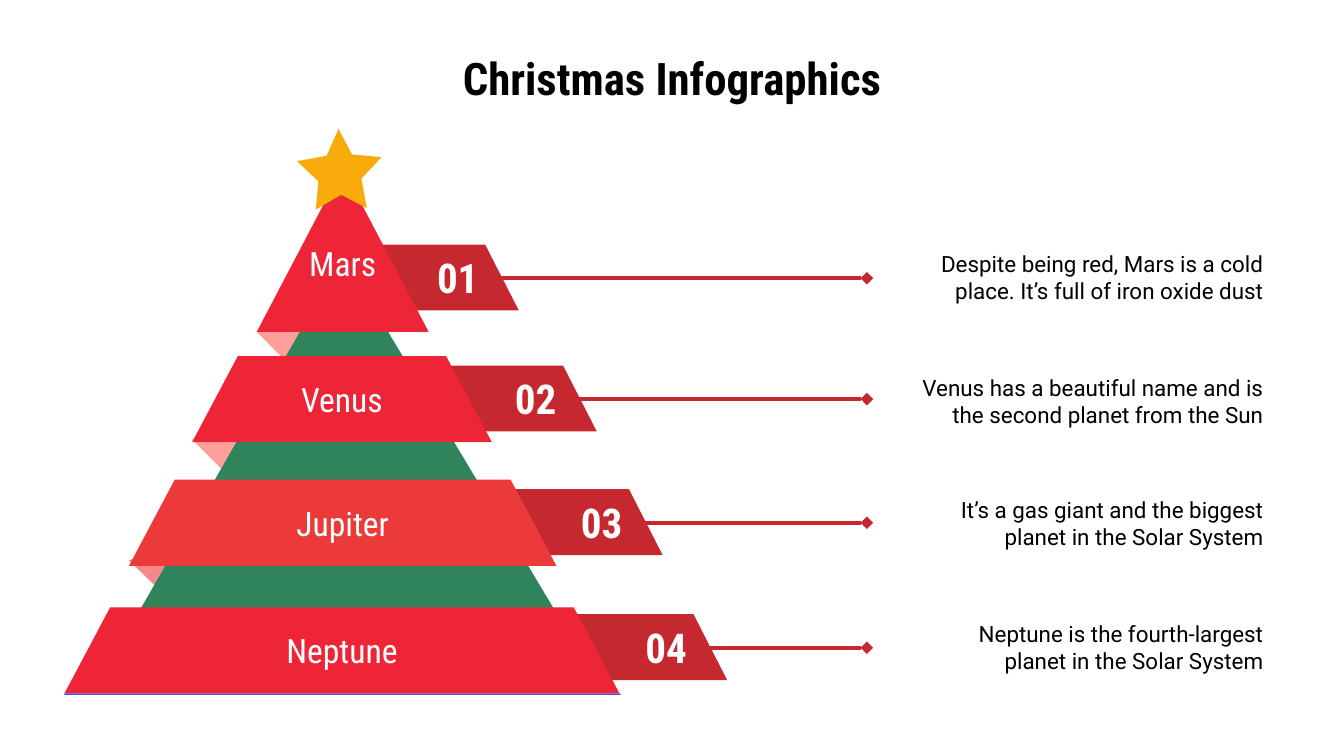
from dataclasses import dataclass

from pptx import Presentation
from pptx import util as u
from pptx.dml.color import RGBColor
from pptx.enum import shapes, text
from pptx.oxml.ns import qn
from lxml import etree

PX = u.Inches(1) // 100  # 100 px to the inch
RED, DARK_RED, GREEN, GOLD = "EE2537", "C6282F", "2F845C", "F9AB0C"
WHITE, BLACK = "FFFFFF", "000000"
CONDENSED, REGULAR = "Roboto Condensed", "Roboto"
TAG_HEIGHT = 49
NOTE_TOP, NOTE_STEP = 175, 91.67


@dataclass
class Tier:
    planet: str
    note: str
    left: int
    right: int
    top: int
    bottom: int
    slant: int
    line_y: int
    tag_left: int
    color: str = RED
    top_inset: int = 10


TIERS = [
    Tier("Mars", "Despite being red, Mars is a cold place. It’s full of iron oxide dust",
         191, 319, 125, 247, 64, 207, 217, top_inset=30),
    Tier("Venus", "Venus has a beautiful name and is the second planet from the Sun",
         143, 366, 265, 329, 34, 297, 275),
    Tier("Jupiter", "It’s a gas giant and the biggest planet in the Solar System",
         96, 414, 357, 421, 34, 389, 324, color="EC3A3B"),
    Tier("Neptune", "Neptune is the fourth-largest planet in the Solar System",
         48, 461, 452, 516, 34, 482, 372),
]
FOLDS = [
    ([(233, 233), (191, 247), (216, 272)], "FF9F99"),
    ([(185, 314), (143, 327), (169, 353)], "FF9F99"),
    ([(143, 401), (96, 417), (125, 445)], "F48989"),
]
STAR = [(284, 117), (262, 115), (252, 96), (243, 116), (221, 120),
        (237, 135), (235, 156), (254, 145), (273, 155), (269, 133)]


def px(value):
    return u.Emu(round(value) * PX)


def color(hex_code):
    return RGBColor.from_string(hex_code)


def paint(shape, fill):
    shape.shadow.inherit = False
    shape.fill.solid()
    shape.fill.fore_color.rgb = color(fill)
    shape.line.fill.background()


def write(shape, words, font, size, ink, align, anchor,
          bold=False, top_inset=10, right_inset=10):
    frame = shape.text_frame
    frame.word_wrap = True
    frame.auto_size = text.MSO_AUTO_SIZE.NONE
    frame.vertical_anchor = anchor
    frame.margin_left = frame.margin_bottom = px(10)
    frame.margin_top, frame.margin_right = px(top_inset), px(right_inset)
    para = frame.paragraphs[0]
    para.alignment = align
    span = para.add_run()
    span.text = words
    span.font.name, span.font.size, span.font.bold = font, u.Pt(size), bold
    span.font.color.rgb = color(ink)


def add_polygon(page, points, fill):
    builder = page.shapes.build_freeform(*points[0], scale=float(PX))
    builder.add_line_segments(points[1:], close=True)
    shape = builder.convert_to_shape()
    paint(shape, fill)
    return shape


def add_pointer(page, y):
    line = page.shapes.add_connector(
        shapes.MSO_CONNECTOR.STRAIGHT, px(364), px(y), px(645), px(y))
    line.line.color.rgb = color(DARK_RED)
    line.line.width = u.Pt(2.25)
    etree.SubElement(line.line._get_or_add_ln(), qn("a:tailEnd"), type="diamond")
    etree.SubElement(line._element.spPr, qn("a:effectLst"))


def add_tag(page, tier, number):
    x, top = tier.tag_left, tier.line_y - 25
    bottom = top + TAG_HEIGHT
    tag = add_polygon(page, [(x + 26, top), (x, bottom), (x + 169, bottom),
                             (x + 144, top)], DARK_RED)
    write(tag, f"{number:02}", CONDENSED, 22, WHITE, text.PP_ALIGN.RIGHT,
          text.MSO_ANCHOR.MIDDLE, bold=True, right_inset=30)


def add_ribbon(page, tier):
    ribbon = add_polygon(page, [
        (tier.left + tier.slant, tier.top), (tier.left, tier.bottom),
        (tier.right, tier.bottom), (tier.right - tier.slant, tier.top)], tier.color)
    write(ribbon, tier.planet, CONDENSED, 18, WHITE, text.PP_ALIGN.CENTER,
          text.MSO_ANCHOR.MIDDLE, top_inset=tier.top_inset)


def add_note(page, words, top):
    box = page.shapes.add_textbox(px(669), px(top), px(281), px(63))
    write(box, words, REGULAR, 12, BLACK, text.PP_ALIGN.RIGHT, text.MSO_ANCHOR.MIDDLE)


def add_title(page, words):
    title = page.shapes.title
    title.left, title.top, title.width, title.height = px(50), px(45), px(900), px(43)
    write(title, words, CONDENSED, 24, BLACK, text.PP_ALIGN.CENTER,
          text.MSO_ANCHOR.BOTTOM, bold=True)


def main():
    deck = Presentation()
    deck.slide_width = u.Inches(10)
    deck.slide_height = deck.slide_width * 9 // 16
    page = deck.slides.add_slide(deck.slide_layouts[5])
    add_title(page, "Christmas Infographics")

    # Pointers and ribbon folds behind the tree
    for tier in TIERS:
        add_pointer(page, tier.line_y)
    for points, fill in FOLDS:
        add_polygon(page, points, fill)

    # Tree
    tree = page.shapes.add_shape(
        shapes.MSO_SHAPE.ISOSCELES_TRIANGLE, px(73), px(191), px(372), px(317))
    tree.adjustments[0] = 0.49
    paint(tree, GREEN)
    add_polygon(page, [(48, 516), (48, 517), (462, 517), (461, 516)], "4949E7")

    # Ribbons with number tags, bottom tier first
    for number, tier in reversed(list(enumerate(TIERS, 1))):
        add_tag(page, tier, number)
        add_ribbon(page, tier)

    # Descriptions
    for row, tier in enumerate(TIERS):
        add_note(page, tier.note, NOTE_TOP + row * NOTE_STEP)

    # Star
    add_polygon(page, STAR, GOLD)
    deck.save("out.pptx")


if __name__ == "__main__":
    main()
